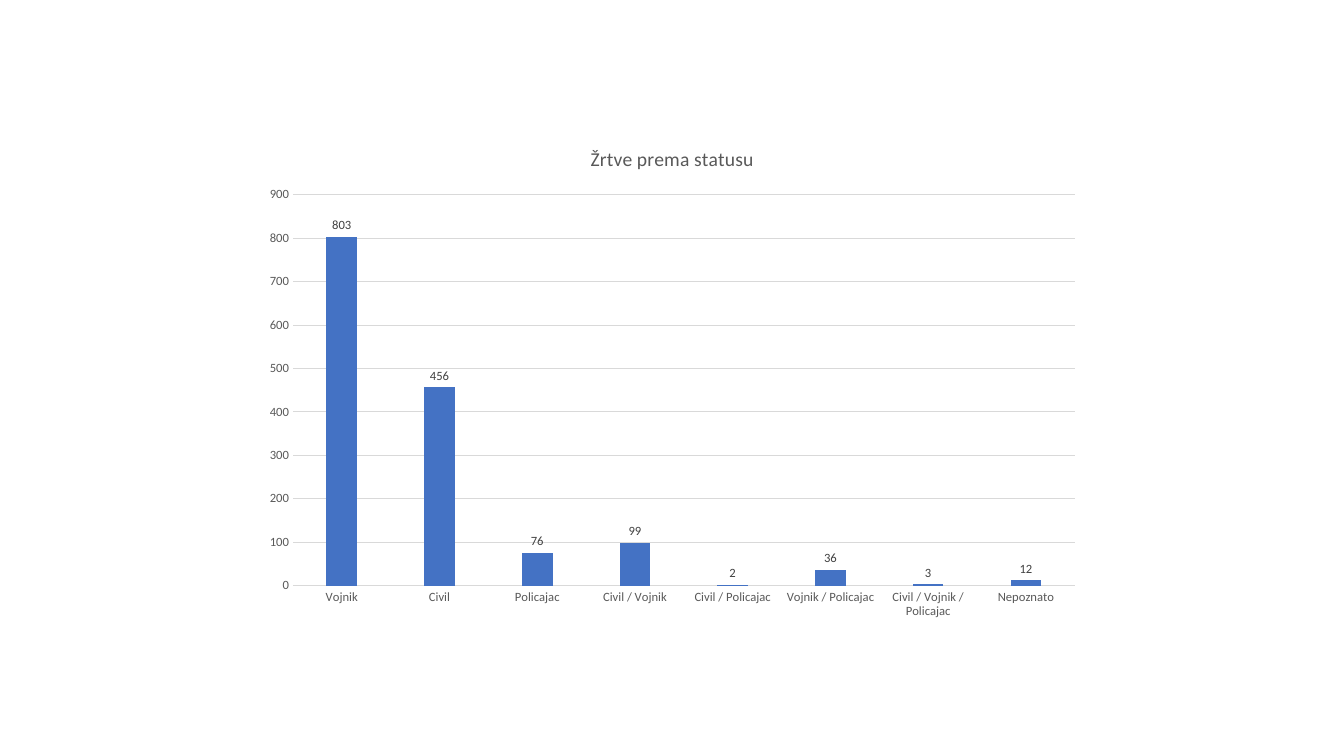
from pptx import Presentation
from pptx.chart.data import CategoryChartData
from pptx.dml.color import RGBColor
from pptx.enum.chart import XL_CHART_TYPE, XL_LABEL_POSITION, XL_TICK_MARK
from pptx.util import Pt

COLORS = {"bar": "4472C4", "grid": "D9D9D9", "text": "595959",
          "label": "404040", "base": "000000"}
FONT = "Calibri"
VICTIMS = {
    "Vojnik": 803,
    "Civil": 456,
    "Policajac": 76,
    "Civil / Vojnik": 99,
    "Civil / Policajac": 2,
    "Vojnik / Policajac": 36,
    "Civil / Vojnik / Policajac": 3,
    "Nepoznato": 12,
}


def set_font(font, size, color):
    font.name = FONT
    font.size = Pt(size)
    font.bold = False
    font.color.rgb = RGBColor.from_string(COLORS[color])


def set_line(line):
    line.color.rgb = RGBColor.from_string(COLORS["grid"])
    line.width = Pt(0.75)


def add_status_chart(s, left, top, width, height):
    data = CategoryChartData()
    data.categories = list(VICTIMS)
    data.add_series("Series 1", list(VICTIMS.values()))
    chart = s.shapes.add_chart(XL_CHART_TYPE.COLUMN_CLUSTERED, Pt(left), Pt(top),
                               Pt(width), Pt(height), data).chart
    set_font(chart.font, 10, "base")
    chart.has_legend = False

    # Title
    chart.has_title = True
    tf = chart.chart_title.text_frame
    tf.text = "Žrtve prema statusu"
    set_font(tf.paragraphs[0].runs[0].font, 14, "text")
    chart.chart_title.include_in_layout = False

    # Axes
    for axis in (chart.category_axis, chart.value_axis):
        axis.major_tick_mark = axis.minor_tick_mark = XL_TICK_MARK.NONE
        set_font(axis.tick_labels.font, 9, "text")
    set_line(chart.category_axis.format.line)
    values = chart.value_axis
    values.format.line.fill.background()
    values.minimum_scale, values.maximum_scale, values.major_unit = 0, 900, 100
    values.has_major_gridlines = True
    set_line(values.major_gridlines.format.line)

    # Bars and their labels
    plot = chart.plots[0]
    plot.gap_width, plot.overlap = 219, -27
    plot.vary_by_categories = False
    series = plot.series[0]
    series.format.fill.solid()
    series.format.fill.fore_color.rgb = RGBColor.from_string(COLORS["bar"])
    labels = series.data_labels
    labels.show_value = True
    labels.position = XL_LABEL_POSITION.OUTSIDE_END
    set_font(labels.font, 9, "label")


def main():
    prs = Presentation()
    prs.slide_width, prs.slide_height = Pt(960), Pt(540)
    s = prs.slides.add_slide(prs.slide_layouts[6])
    add_status_chart(s, 180.7, 90, 599, 359.3)
    prs.save("out.pptx")


if __name__ == "__main__":
    main()
